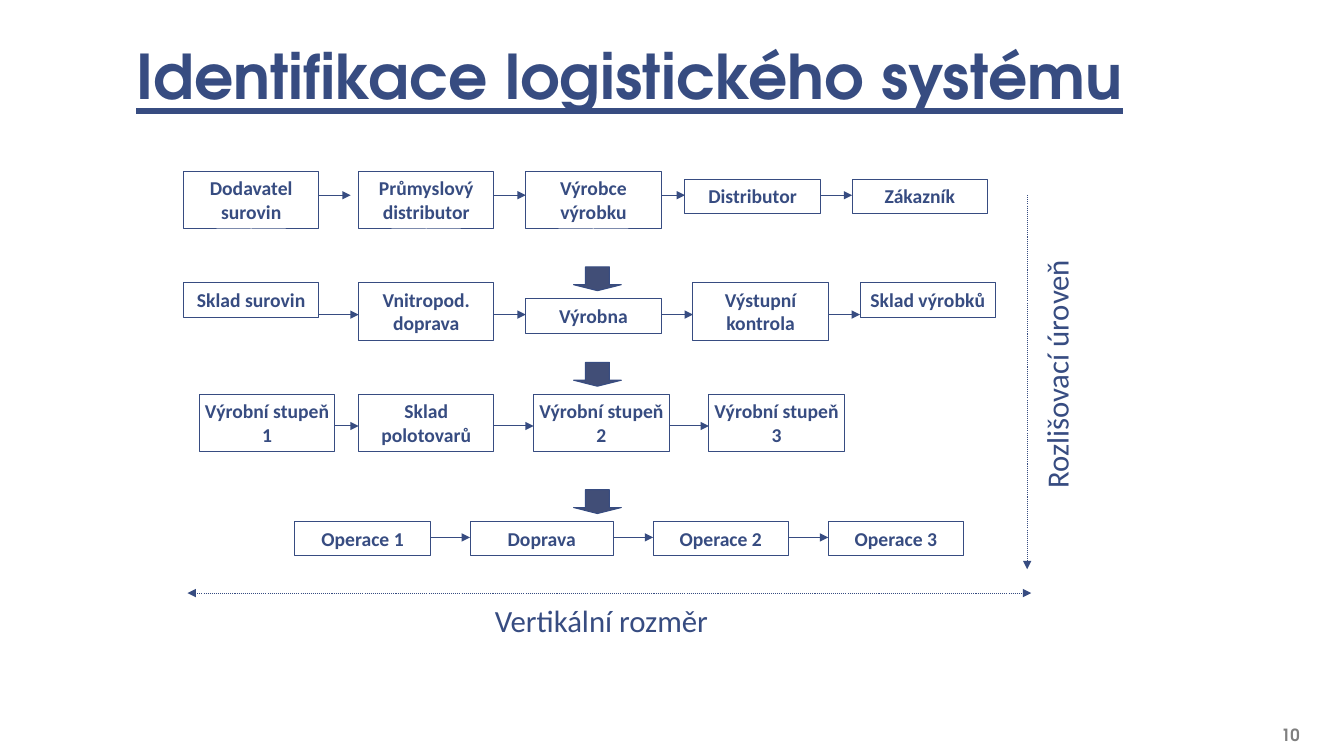
"""Build the slide on the levels of a logistics system."""
from dataclasses import dataclass

from lxml.etree import SubElement
from pptx import Presentation
from pptx.dml.color import RGBColor as Color
from pptx.enum.dml import MSO_LINE as Dash
from pptx.enum.shapes import MSO_CONNECTOR as Connector, MSO_SHAPE as Shape
from pptx.enum.text import MSO_ANCHOR as Anchor, MSO_AUTO_SIZE as Fit, PP_ALIGN as Align
from pptx.oxml.ns import qn
from pptx.util import Inches, Pt


@dataclass(frozen=True)
class Theme:
    navy: Color = Color.from_string("374C81")
    arrow: Color = Color.from_string("414E77")
    white: Color = Color.from_string("FFFFFF")
    grey: Color = Color.from_string("7F7F7F")
    heading: str = "TeX Gyre Adventor"
    body: str = "Calibri"
    title_size: int = 44
    label_size: int = 22
    box_size: int = 14
    number_size: int = 12
    stroke: float = 0.75


theme = Theme()
deck = Presentation()
deck.slide_width, deck.slide_height = Inches(13.33), Inches(7.5)
page = deck.slides.add_slide(deck.slide_layouts[5])
STEP = deck.slide_height / 95
ORIGIN_X, ORIGIN_Y = Inches(1.82), Inches(1.7)
BOX_WIDTH = 17
LINE_HEIGHTS = {1: 4.33, 2: 7.25}


def place(column, row, width, height):
    return (int(ORIGIN_X + column * STEP), int(ORIGIN_Y + row * STEP),
            int(width * STEP), int(height * STEP))


def write(box, text, size, font=theme.body, color=theme.navy, bold=False,
          underline=False, align=Align.CENTER, anchor=Anchor.TOP,
          inset=0.1, pad=0.05, spacing=None):
    frame = box.text_frame
    frame.word_wrap, frame.auto_size, frame.vertical_anchor = True, Fit.NONE, anchor
    frame.margin_left = frame.margin_right = Inches(inset)
    frame.margin_top = frame.margin_bottom = Inches(pad)
    para = frame.paragraphs[0]
    para.alignment, para.line_spacing, para.space_before = align, spacing, Pt(0)
    span = para.add_run()
    span.text = text
    span.font.name, span.font.size = font, Pt(size)
    span.font.bold, span.font.underline = bold, underline
    span.font.color.rgb = color


title = page.shapes.title
title.left, title.top, title.width, title.height = place(-7.6, -26, 140.8, 19.4)
write(title, "Identifikace logistického systému", theme.title_size, theme.heading,
      bold=True, underline=True, align=Align.LEFT, anchor=Anchor.BOTTOM,
      inset=0.13, pad=0.07, spacing=0.85)

number = page.shapes.add_textbox(*place(126.6, 68.6, 15.3, 4.4))
write(number, "10", theme.number_size, theme.heading, theme.grey, bold=True,
      align=Align.RIGHT, anchor=Anchor.BOTTOM, inset=0.13, pad=0.07)

levels = [
    (3, [("Dodavatel surovin", 0, 0, 2), ("Průmyslový distributor", 22, 0, 2),
         ("Výrobce výrobku", 43, 0, 2), ("Distributor", 63, 1, 1),
         ("Zákazník", 84, 1, 1)]),
    (18, [("Sklad surovin", 0, 14, 1), ("Vnitropod. doprava", 22, 14, 2),
          ("Výrobna", 43, 16, 1), ("Výstupní kontrola", 64, 14, 2),
          ("Sklad výrobků", 85, 14, 1)]),
    (32, [("Výrobní stupeň 1", 2, 28, 2), ("Sklad polotovarů", 22, 28, 2),
          ("Výrobní stupeň 2", 44, 28, 2), ("Výrobní stupeň 3", 66, 28, 2)]),
    (46, [("Operace 1", 14, 44, 1), ("Doprava", 36, 44, 1),
          ("Operace 2", 59, 44, 1), ("Operace 3", 81, 44, 1)]),
]

both_ends, end_only = ("a:headEnd", "a:tailEnd"), ("a:tailEnd",)
lines = [(106, 3, 0, 47, Dash.ROUND_DOT, end_only),
         (0.5, 53, 106, 0, Dash.ROUND_DOT, both_ends)]
for arrow_row, steps in levels:
    previous_right = None
    for text, column, row, line_count in steps:
        width = BOX_WIDTH + (text == "Doprava")
        box = page.shapes.add_shape(
            Shape.RECTANGLE, *place(column, row, width, LINE_HEIGHTS[line_count]))
        box.shadow.inherit = False
        box.fill.solid()
        box.fill.fore_color.rgb = theme.white
        box.line.color.rgb, box.line.width = theme.navy, Pt(theme.stroke)
        write(box, text, theme.box_size, bold=True, inset=0.05)
        if previous_right is not None:
            end = column - (text == "Průmyslový distributor")
            lines.append((previous_right, arrow_row, end - previous_right, 0,
                          Dash.SOLID, end_only))
        previous_right = column + width

for column, row, width, height, dash, ends in lines:
    x, y, run, rise = place(column, row, width, height)
    line = page.shapes.add_connector(Connector.STRAIGHT, x, y, x + run, y + rise)
    line.line.color.rgb, line.line.width = theme.navy, Pt(theme.stroke)
    line.line.dash_style = dash
    for end in ends:
        SubElement(line.line._get_or_add_ln(), qn(end), type="triangle")
    SubElement(line._element.spPr, qn("a:effectLst"))

for row in (12, 24, 40):
    arrow = page.shapes.add_shape(Shape.DOWN_ARROW, *place(49, row, 6, 3))
    arrow.adjustments[0], arrow.adjustments[1] = 0.5, 0.25
    arrow.shadow.inherit = False
    arrow.fill.solid()
    arrow.fill.fore_color.rgb = theme.arrow
    arrow.line.color.rgb, arrow.line.width = theme.navy, Pt(theme.stroke)

for text, area, rotation in (("Vertikální rozměr", (11, 53.5, 83, 6), 0),
                             ("Rozlišovací úroveň", (95.2, 19, 36, 13), 270)):
    label = page.shapes.add_textbox(*place(*area))
    label.rotation = rotation
    write(label, text, theme.label_size)

deck.save("out.pptx")
